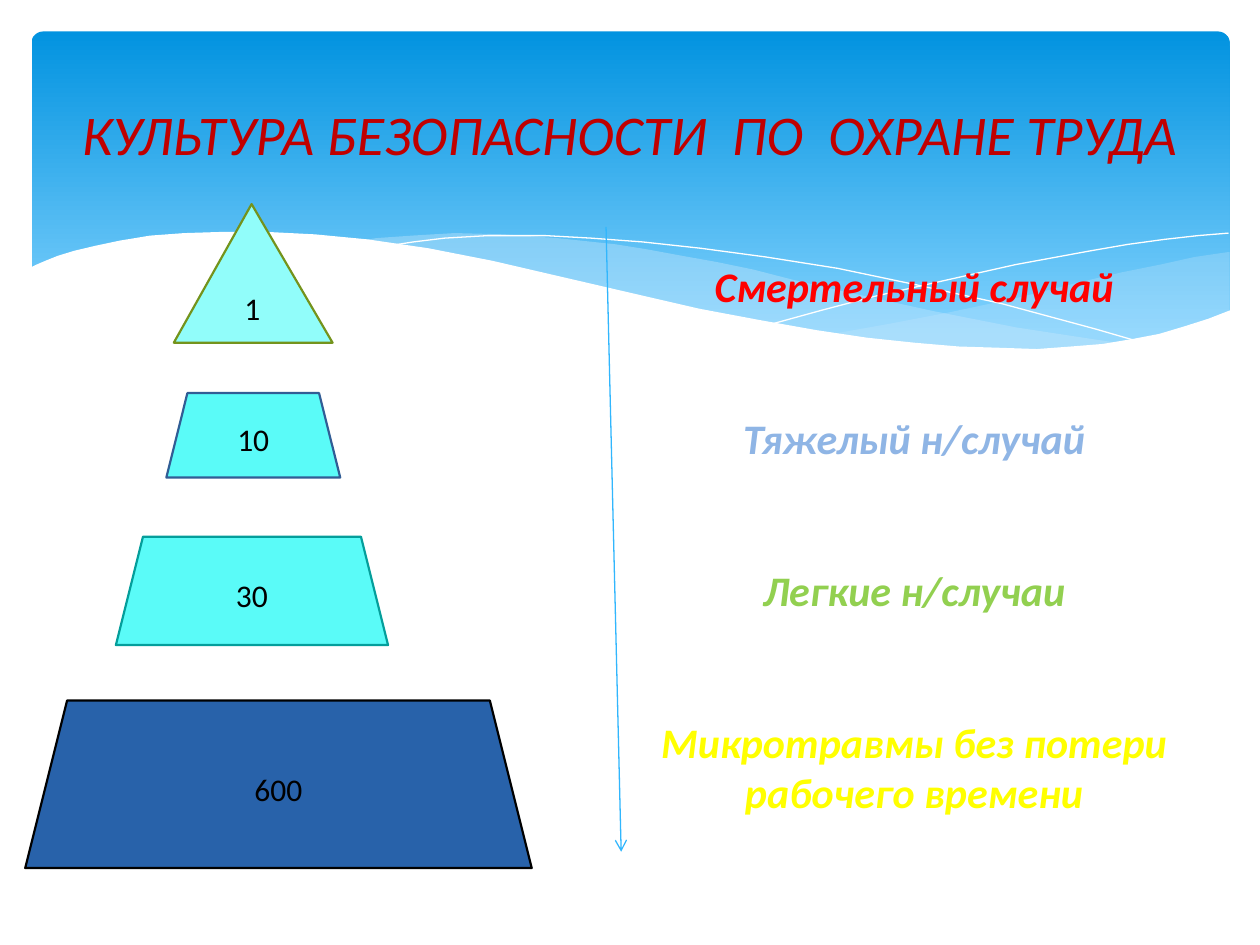
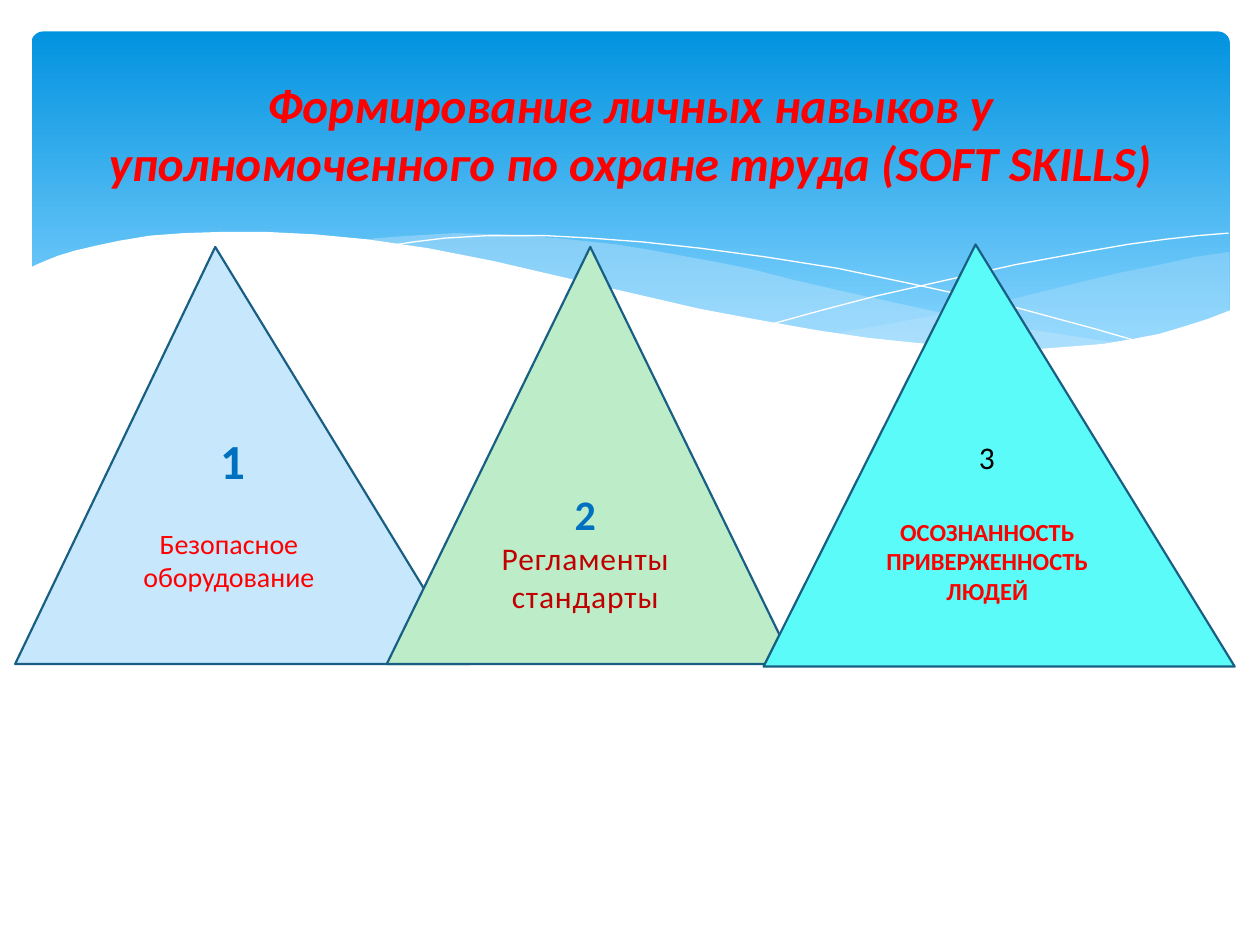
from lxml import etree
from pptx import Presentation
from pptx.dml.color import RGBColor
from pptx.enum.shapes import MSO_CONNECTOR, MSO_SHAPE
from pptx.enum.text import MSO_ANCHOR, PP_ALIGN
from pptx.oxml.ns import qn
from pptx.util import Pt

PX = 9144  # EMU per px, 100 px to the inch
ROUND = MSO_SHAPE.ROUNDED_RECTANGLE
TRI = MSO_SHAPE.ISOSCELES_TRIANGLE
TRAP = MSO_SHAPE.TRAPEZOID
STRAIGHT = MSO_CONNECTOR.STRAIGHT
TOP, MID = MSO_ANCHOR.TOP, MSO_ANCHOR.MIDDLE
CENTER = PP_ALIGN.CENTER
FONT = "Calibri"

COLORS = {
    "white": "FFFFFF", "black": "000000", "red": "FF0000", "wine": "C00000",
    "deep": "0293E0", "sky": "83D3FE", "mist": "C6E7FC", "arrow": "31B6FD",
    "pale": "91FDFA", "aqua": "5AFBF8", "navy": "2862AA", "mint": "BDECC9",
    "olive": "74931C", "steel": "315D95", "teal": "049E9B", "edge": "195F84",
    "blue": "0070C0", "soft": "8FB5E5", "green": "92D050", "yellow": "FFFF00",
}

# Outlines of the waves under the title band
RIGHT_WAVE = [
    (975, 200), (948, 204), (921, 210), (891, 216), (861, 223), (805, 237),
    (753, 248), (706, 257), (661, 265), (691, 269), (719, 272), (745, 275),
    (769, 277), (803, 278), (835, 277), (863, 275), (889, 272), (913, 267),
    (935, 262), (949, 257), (963, 252), (976, 247), (976, 200)]
LONG_WAVE = [
    (893, 273), (866, 269), (807, 260), (741, 247), (668, 231), (629, 222),
    (598, 214), (569, 208), (541, 203), (514, 198), (489, 194), (442, 189),
    (399, 186), (361, 185), (328, 187), (299, 189), (286, 191), (323, 196),
    (362, 203), (404, 211), (449, 222), (530, 240), (601, 255), (650, 264),
    (695, 270), (736, 275), (773, 277), (807, 278), (838, 278), (867, 276),
    (893, 273)]
FALL_LINE = [
    (309, 195), (328, 192), (353, 189), (387, 187), (433, 187), (469, 189),
    (510, 192), (556, 197), (608, 204), (665, 213), (727, 226), (795, 241),
    (869, 261), (907, 272)]
RISE_LINE = [
    (613, 257), (653, 246), (695, 235), (748, 223), (806, 210), (866, 199),
    (895, 194), (924, 190), (951, 187), (975, 185)]
WHITE_WAVE = [
    (977, 246), (959, 253), (940, 259), (920, 265), (899, 269), (875, 273),
    (850, 275), (823, 277), (793, 276), (761, 275), (726, 272), (688, 268),
    (648, 262), (603, 254), (555, 245), (503, 233), (447, 220), (391, 207),
    (340, 197), (292, 190), (250, 186), (211, 184), (177, 184), (146, 185),
    (119, 187), (95, 191), (76, 195), (59, 199), (46, 203), (36, 207),
    (29, 210), (23, 213), (23, 329), (977, 329)]


def rgb(name):
    return RGBColor.from_string(COLORS[name])


class Deck:
    def __init__(self):
        self.prs = Presentation()
        self.prs.slide_width, self.prs.slide_height = 1000 * PX, 750 * PX
        self.items = None

    def slide(self, title, size, color, bold=False):
        """Start a slide with the shared band, waves and title."""
        layout = self.prs.slide_layouts[6]
        self.items = self.prs.slides.add_slide(layout).shapes
        self.band()
        self.wave(RIGHT_WAVE, "mist", 29)
        self.wave(LONG_WAVE, "mist", 40)
        self.wave(FALL_LINE)
        self.wave(RISE_LINE)
        self.wave(WHITE_WAVE, "white", 100)
        self.text((50, 37, 900, 137), [(title, size, color, bold, True)], MID)

    def band(self):
        band = self.shape(ROUND, (25, 25, 951, 270), "deep", adj=0.034)
        band.fill.gradient()
        band.fill.gradient_angle = 270
        stops = band.fill.gradient_stops
        for stop, name, place in zip(stops, ("deep", "sky"), (0, 0.9)):
            stop.color.rgb, stop.position = rgb(name), place

    def wave(self, points, fill=None, alpha=None):
        """Draw a filled wave, or a white hairline when there is no fill."""
        pen = self.items.build_freeform(*points[0], scale=PX)
        pen.add_line_segments(points[1:], close=bool(fill))
        wave = pen.convert_to_shape()
        wave.shadow.inherit = False
        if fill is None:
            wave.fill.background()
            wave.line.color.rgb, wave.line.width = rgb("white"), Pt(0)
            return
        wave.line.fill.background()
        wave.fill.solid()
        wave.fill.fore_color.rgb = rgb(fill)
        tint = wave._element.spPr.find(".//" + qn("a:srgbClr"))
        etree.SubElement(tint, qn("a:alpha"), val=str(alpha * 1000))

    def shape(self, kind, box, fill, line=None, adj=None, rows=()):
        item = self.items.add_shape(kind, *(n * PX for n in box))
        item.shadow.inherit = False
        if adj is not None:
            item.adjustments[0] = adj
        item.fill.solid()
        item.fill.fore_color.rgb = rgb(fill)
        if line:
            item.line.color.rgb, item.line.width = rgb(line), Pt(1.25)
        else:
            item.line.fill.background()
        if rows:
            self.fill_text(item.text_frame, rows, MID)
        return item

    def text(self, box, rows, anchor=TOP, wrap=True, gap=0, track=0):
        item = self.items.add_textbox(*(n * PX for n in box))
        self.fill_text(item.text_frame, rows, anchor, wrap, gap, track)

    def fill_text(self, frame, rows, anchor, wrap=True, gap=0, track=0):
        """Fill a frame; a row is text, size, colour, bold, italic."""
        frame.word_wrap, frame.vertical_anchor = wrap, anchor
        for i, (words, size, color, bold, slant) in enumerate(rows):
            para = frame.add_paragraph() if i else frame.paragraphs[0]
            para.text, para.alignment = words, CENTER
            if i and gap:
                para.space_before = Pt(gap)
            font = para.font
            font.name, font.size, font.color.rgb = FONT, Pt(size), rgb(color)
            font.bold, font.italic = bold, slant
            if track:
                para._p.pPr.find(qn("a:defRPr")).set("spc", str(track))

    def arrow(self, start, end, color):
        ends = (n * PX for n in start + end)
        line = self.items.add_connector(STRAIGHT, *ends)
        line.line.color.rgb, line.line.width = rgb(color), Pt(0.75)
        props = line._element.spPr
        etree.SubElement(props.find(qn("a:ln")), qn("a:tailEnd"), type="arrow")
        etree.SubElement(props, qn("a:effectLst"))


def pyramid(deck):
    deck.slide("КУЛЬТУРА БЕЗОПАСНОСТИ  ПО  ОХРАНЕ ТРУДА", 32, "wine")
    # Levels of the pyramid
    levels = [
        ("1", TRI, (138, 162, 126, 110), "pale", "olive", 0.49),
        ("10", TRAP, (132, 312, 138, 67), "aqua", "steel", None),
        ("30", TRAP, (92, 426, 216, 86), "aqua", "teal", None),
        ("600", TRAP, (20, 556, 402, 133), "navy", "black", None),
    ]
    for count, kind, box, fill, line, adj in levels:
        row = (count, 18, "black", False, False)
        deck.shape(kind, box, fill, line, adj, [row])
    deck.arrow((481, 180), (493, 676), "arrow")
    # Names of the levels
    names = [
        ("Смертельный случай", "red"),
        ("Тяжелый н/случай", "soft"),
        ("Легкие н/случаи", "green"),
        ("Микротравмы без потери рабочего времени", "yellow"),
    ]
    rows = [(name, 24, color, True, True) for name, color in names]
    deck.text((508, 202, 435, 454), rows, gap=58)


def skills(deck):
    deck.slide("Формирование личных навыков у уполномоченного по охране труда "
               "(SOFT SKILLS)", 28, "red", True)
    # Safe equipment
    deck.shape(TRI, (12, 196, 361, 331), "mist", "edge", 0.44,
               [("Безопасное оборудование", 16, "red", False, False)])
    deck.text((165, 337, 33, 57), [("1", 28, "blue", True, False)], wrap=False)
    # Rules and standards
    deck.shape(TRI, (307, 196, 323, 331), "mint", "edge")
    deck.text((382, 383, 165, 111), [
        ("2", 24, "blue", True, False),
        ("Регламенты", 18, "wine", False, False),
        ("стандарты", 18, "wine", False, False)], track=50)
    # People
    deck.shape(TRI, (606, 194, 374, 335), "aqua", "edge", 0.45, [
        ("ОСОЗНАННОСТЬ ПРИВЕРЖЕННОСТЬ", 14, "red", True, False),
        ("ЛЮДЕЙ", 14, "red", True, False)])
    deck.text((767, 343, 30, 71), [("3", 18, "black", False, False)], wrap=False)


def main():
    deck = Deck()
    pyramid(deck)
    skills(deck)
    deck.prs.save("out.pptx")


if __name__ == "__main__":
    main()
